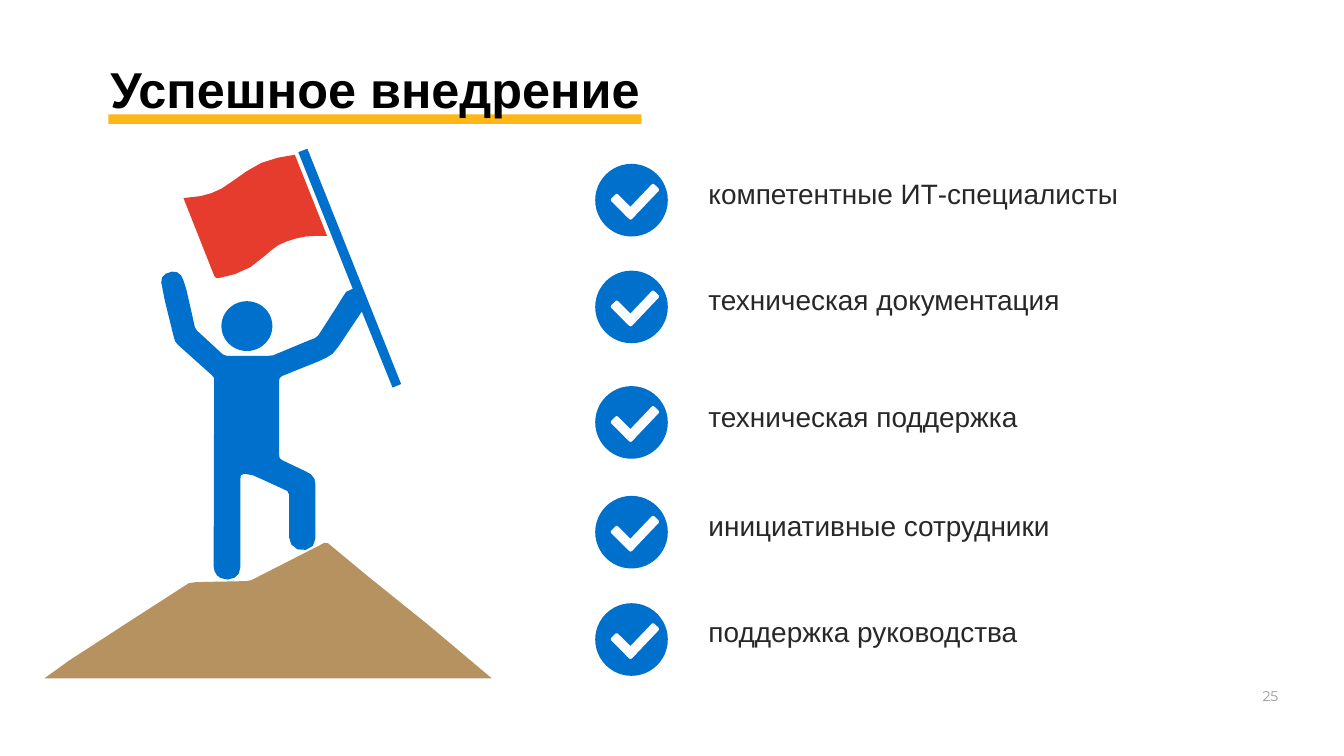
from collections import namedtuple

from pptx import Presentation
from pptx.dml.color import RGBColor
from pptx.enum.shapes import MSO_SHAPE as SHAPE
from pptx.enum.text import MSO_ANCHOR as ANCHOR, MSO_AUTO_SIZE as AUTO, PP_ALIGN as ALIGN
from pptx.util import Cm, Pt

Theme = namedtuple("Theme", "blue red sand yellow white black ink grey title body small")
theme = Theme("0070CD", "E53C2E", "B5925F", "FFB718", "FDFCFF", "000000", "292729", "9B9A9C",
              title=72, body=40, small=20)

prs = Presentation()
prs.slide_width, prs.slide_height = Cm(67.74), Cm(38.1)
s = prs.slides.add_slide(prs.slide_layouts[6])


def paint(sp, color):
    sp.shadow.inherit = False
    sp.fill.solid()
    sp.fill.fore_color.rgb = RGBColor.from_string(color)
    sp.line.fill.background()
    return sp


def add_text(text, x, y, w, h, size, color, font="Arial", inset=(0.1, 0.1)):
    tf = s.shapes.add_textbox(Cm(x), Cm(y), Cm(w), Cm(h)).text_frame
    tf.word_wrap = True
    tf.margin_left = tf.margin_right = Cm(inset[0])
    tf.margin_top = tf.margin_bottom = Cm(inset[1])
    p = tf.paragraphs[0]
    p.text = text
    r = p.runs[0]
    r.font.name, r.font.size = font, Pt(size)
    r.font.color.rgb = RGBColor.from_string(color)
    return tf


# Climber with a flag on a mountain: outlines in hundredths of an inch
mountain = [
    (88, 1346), (138, 1310), (186, 1279), (246, 1240), (364, 1164), (375, 1157), (389, 1155),
    (489, 1153), (499, 1151), (644, 1077), (651, 1078), (732, 1145), (850, 1240), (976, 1346)]
climber = [
    # right hand and pole
    (718, 618), (779, 769), (796, 762), (610, 295), (592, 302), (700, 573), (687, 579), (679, 591),
    # right arm, shoulders, left arm
    (668, 609), (632, 665), (625, 671), (614, 675), (542, 705), (533, 706), (450, 706), (442, 703),
    (391, 656), (387, 650), (385, 641), (370, 575), (364, 556), (359, 546), (351, 540), (341, 539),
    (329, 543), (322, 550), (320, 560), (327, 596), (345, 669), (348, 678), (353, 684), (420, 744),
    # standing leg
    (425, 750), (425, 756), (424, 1124), (426, 1134), (431, 1142), (438, 1147), (452, 1150),
    (466, 1146), (474, 1138), (477, 1125), (477, 950), (478, 943), (485, 940), (502, 943),
    # raised leg
    (520, 951), (570, 974), (574, 982), (574, 1067), (578, 1080), (590, 1090), (607, 1091),
    (621, 1083), (626, 1068), (626, 961), (624, 950), (617, 941), (606, 935), (560, 913),
    # right side up to the shoulder
    (555, 909), (554, 903), (554, 755), (555, 750), (560, 746), (632, 717), (647, 710), (660, 702),
    (672, 687)]
flag = [
    (649, 468), (585, 307), (551, 313), (519, 323), (489, 340), (465, 357), (440, 374), (420, 383),
    (399, 389), (364, 393), (370, 408), (425, 547), (428, 551), (433, 552), (466, 544), (497, 530),
    (525, 508), (539, 496), (553, 486), (569, 479), (588, 473), (608, 469), (629, 468)]
for points, color in ((mountain, theme.sand), (climber, theme.blue), (flag, theme.red)):
    builder = s.shapes.build_freeform(*points[0], scale=Cm(0.0254))
    builder.add_line_segments(points[1:])
    paint(builder.convert_to_shape(), color)
paint(s.shapes.add_shape(SHAPE.OVAL, Cm(11.16), Cm(15.18), Cm(2.57), Cm(2.51)), theme.blue)

# Underline, then the title in front of it so that the descenders stay visible
paint(s.shapes.add_shape(SHAPE.RECTANGLE, Cm(5.46), Cm(5.77), Cm(26.87), Cm(0.48)), theme.yellow)
tf = add_text("Успешное внедрение", 5.46, 2.24, 27.79, 4.39, theme.title, theme.black)
tf.vertical_anchor = ANCHOR.MIDDLE
tf.margin_bottom = Cm(0.66)
tf.paragraphs[0].line_spacing = 1.2
tf.paragraphs[0].runs[0].font.bold = True

# Checklist: text, top of the badge, top of the text
rows = [
    ("компетентные ИТ-специалисты", 8.26, 8.64),
    ("техническая документация", 13.64, 13.97),
    ("техническая поддержка", 19.46, 19.86),
    ("инициативные сотрудники", 24.99, 25.37),
    ("поддержка руководства", 30.4, 30.71),
]
# Strokes of the tick: left, drop from the badge top, height, rotation, rounding
strokes = [(31.19, 1.43, 1.45, 314.7, 0.19), (32.11, 0.84, 2.13, 43.6, 0.21)]
for text, badge_top, text_top in rows:
    paint(s.shapes.add_shape(SHAPE.OVAL, Cm(30), Cm(badge_top), Cm(3.66), Cm(3.66)), theme.blue)
    for x, drop, h, angle, rounding in strokes:
        sp = s.shapes.add_shape(SHAPE.ROUNDED_RECTANGLE, Cm(x), Cm(badge_top + drop), Cm(0.48), Cm(h))
        paint(sp, theme.white)
        sp.rotation = angle
        sp.adjustments[0] = rounding
    tf = add_text(text, 35.2, text_top, 24.71, 2.24, theme.body, theme.ink, inset=(0.51, 0.25))
    tf.auto_size = AUTO.SHAPE_TO_FIT_TEXT

# Page number
tf = add_text("25", 62.79, 34.57, 2.49, 1.07, theme.small, theme.grey, "Montserrat")
tf.auto_size = AUTO.SHAPE_TO_FIT_TEXT
tf.paragraphs[0].alignment = ALIGN.CENTER

prs.save("out.pptx")
